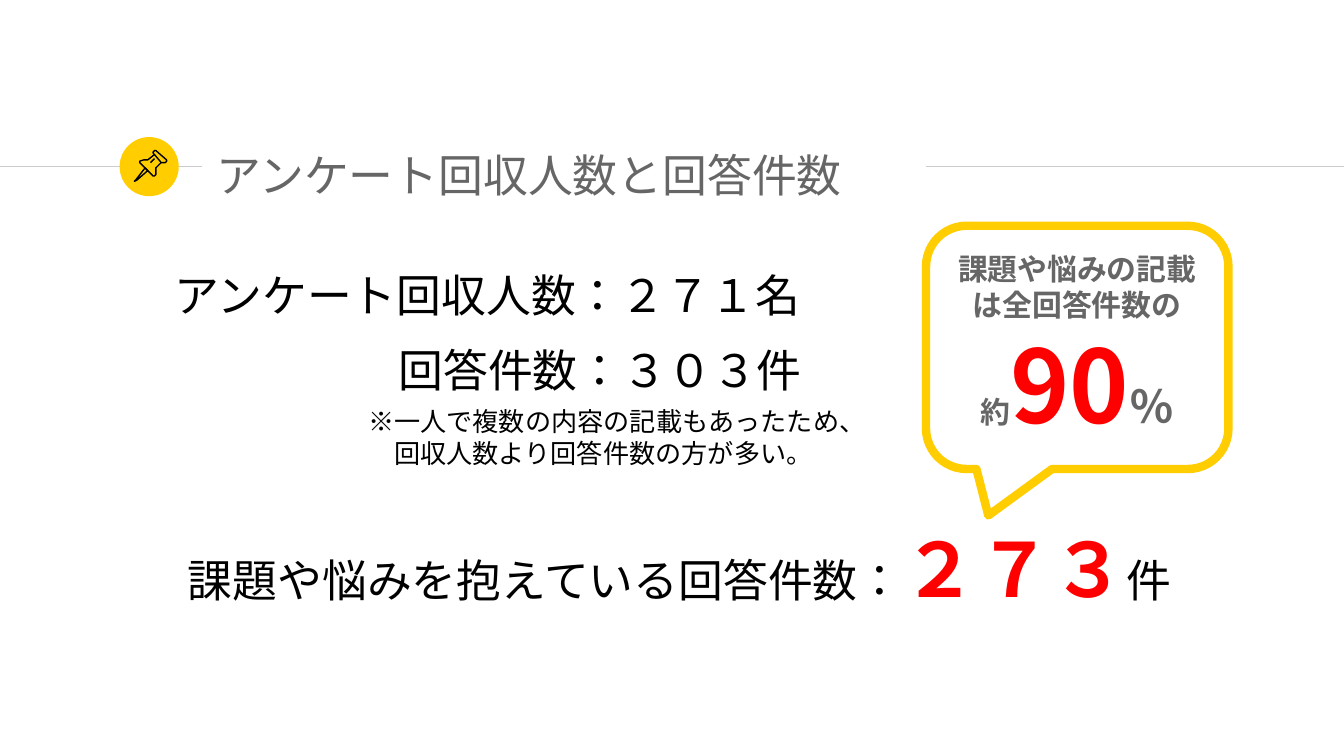
from lxml import etree
from pptx import Presentation
from pptx.dml.color import RGBColor
from pptx.enum.lang import MSO_LANGUAGE_ID as LANG
from pptx.enum.shapes import MSO_CONNECTOR, MSO_SHAPE
from pptx.enum.text import MSO_ANCHOR, MSO_AUTO_SIZE, PP_ALIGN
from pptx.oxml.ns import qn
from pptx.util import Inches, Pt

FONT = "Noto Sans CJK JP"
COLORS = {"yellow": "FFCD00", "grey": "666666", "rule": "CCCCCC",
          "red": "FF0000", "black": "000000", "white": "FFFFFF"}

# Strokes of the pin in hundredths of an inch from the disc's corner, and closed or not
PIN_STROKES = [
    ([(19, 23), (12, 32), (11, 33), (13, 32), (21, 25)], True),
    ([(26, 13), (31, 19), (32, 19), (34, 19), (35, 18), (35, 17),
      (27, 10), (26, 10), (25, 11), (25, 12)], True),
    ([(26, 13), (21, 17), (18, 17), (15, 18), (15, 19), (25, 29),
      (26, 29), (27, 28), (27, 23), (31, 19)], False),
    ([(23, 19), (26, 16)], False),
]


def color(name):
    return RGBColor.from_string(COLORS[name])


def add_run(p, text, size, name="black", bold=False):
    r = p.add_run()
    r.text = text
    font = r.font
    font.size, font.bold, font.name = Pt(size), bold, FONT
    font.language_id = LANG.JAPANESE
    font.color.rgb = color(name)
    etree.SubElement(r._r.get_or_add_rPr(), qn("a:ea")).set("typeface", FONT)


def paint(sp, fill=None, line=None, width=0.75):
    sp.shadow.inherit = False
    if fill:
        sp.fill.solid()
        sp.fill.fore_color.rgb = color(fill)
    else:
        sp.fill.background()
    if line:
        sp.line.color.rgb = color(line)
        sp.line.width = Pt(width)
    else:
        sp.line.fill.background()


def add_rule(s, x1, x2, y):
    line = s.shapes.add_connector(MSO_CONNECTOR.STRAIGHT, Inches(x1), Inches(y),
                                  Inches(x2), Inches(y))
    line.line.color.rgb = color("rule")
    line.line.width = Pt(0.75)
    etree.SubElement(line._element.spPr, qn("a:effectLst"))


def add_pin(s, x, y, size):
    disc = s.shapes.add_shape(MSO_SHAPE.OVAL, Inches(x), Inches(y),
                              Inches(size), Inches(size))
    paint(disc, "yellow")
    for points, closed in PIN_STROKES:
        builder = s.shapes.build_freeform(*points[0], scale=Inches(0.01))
        builder.add_line_segments(points[1:], close=closed)
        paint(builder.convert_to_shape(Inches(x), Inches(y)), line="black")


def add_header(s, x, y, w, h):
    """Rules either side, the pin, and the title in the given box."""
    middle = 1.24
    add_rule(s, 0, x - 0.01, middle)
    add_rule(s, 5.76, 10, middle)
    add_pin(s, x - 0.62, middle - 0.22, 0.44)

    title = s.shapes.title
    s.shapes._spTree.append(title._element)  # in front of the rules
    title.left, title.top, title.width, title.height = map(Inches, (x, y, w, h))
    title.fill.solid()
    title.fill.fore_color.rgb = color("white")
    tf = title.text_frame
    tf.auto_size = MSO_AUTO_SIZE.NONE
    tf.vertical_anchor = MSO_ANCHOR.MIDDLE
    tf.margin_left = tf.margin_right = tf.margin_top = tf.margin_bottom = Inches(0.1)
    p = tf.paragraphs[0]
    p.alignment = PP_ALIGN.LEFT
    add_run(p, "アンケート回収人数と回答件数", 24, "grey")


def add_callout(s, x, y, w, h):
    sp = s.shapes.add_shape(MSO_SHAPE.ROUNDED_RECTANGULAR_CALLOUT,
                            Inches(x), Inches(y), Inches(w), Inches(h))
    for i, value in enumerate((-0.294, 0.691, 0.167)):
        sp.adjustments[i] = value
    paint(sp, "white", "yellow", 4.5)
    tf = sp.text_frame
    tf.word_wrap = True
    tf.vertical_anchor = MSO_ANCHOR.MIDDLE
    p = tf.paragraphs[0]
    p.alignment = PP_ALIGN.CENTER
    add_run(p, "課題や悩みの記載は全回答件数の", 16, "grey", True)
    p.add_line_break()
    add_run(p, "約", 16, "grey", True)
    add_run(p, "90", 54, "red", True)
    add_run(p, "％", 24, "grey", True)


def add_text(s, x, y, w, h, *lines):
    """Each line is (indent in points, list of run arguments)."""
    tf = s.shapes.add_textbox(Inches(x), Inches(y), Inches(w), Inches(h)).text_frame
    tf.word_wrap = True
    tf.auto_size = MSO_AUTO_SIZE.SHAPE_TO_FIT_TEXT
    for i, (indent, runs) in enumerate(lines):
        p = tf.add_paragraph() if i else tf.paragraphs[0]
        p._p.get_or_add_pPr().set("marL", str(Pt(indent)))
        for run in runs:
            add_run(p, *run)


def add_counts(s, x, y, w):
    add_text(s, x, y, w, 0.5, (0, [("アンケート回収人数：２７１名", 24)]))
    add_text(s, x, y + 0.56, w, 0.5, (5 * 24, [("回答件数：３０３件", 24)]))
    add_text(s, x + 0.1, y + 1.9, 7.65, 0.77,
             (0, [("課題や悩みを抱えている回答件数：", 24),
                  ("２７３", 40, "red", True), ("件", 24)]))
    add_text(s, x + 1.44, y + 1.03, 3.91, 0.57,
             (0, [("※一人で複数の内容の記載もあったため、", 14)]),
             (14, [("回収人数より回答件数の方が多い。", 14)]))


def main():
    prs = Presentation()
    prs.slide_width = Inches(10)
    prs.slide_height = prs.slide_width * 9 // 16
    s = prs.slides.add_slide(prs.slide_layouts[5])
    add_header(s, 1.51, 1.06, 5.38, 0.48)
    add_callout(s, 6.89, 1.68, 2.25, 1.81)
    add_counts(s, 1.2, 1.94, 6.97)
    prs.save("out.pptx")


if __name__ == "__main__":
    main()
